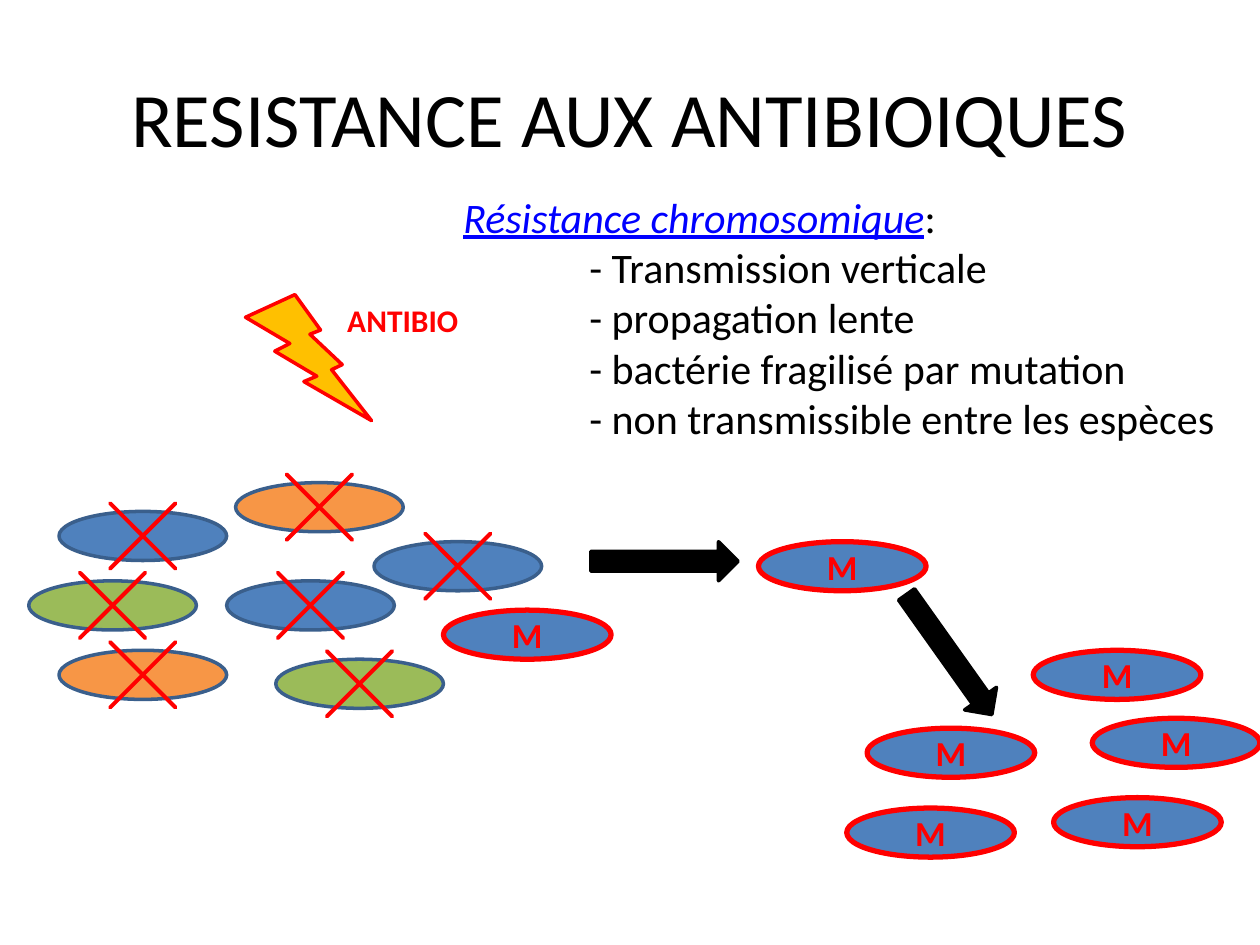
import pptx
import pptx.util
import pptx.dml.color
import pptx.enum.shapes
import pptx.enum.text

Cm = pptx.util.Cm
Pt = pptx.util.Pt
Kind = pptx.enum.shapes.MSO_SHAPE
Align = pptx.enum.text.PP_ALIGN
Anchor = pptx.enum.text.MSO_ANCHOR

RED, BLUE, GREEN, ORANGE = "FF0000", "4F81BD", "9BBB59", "F79646"
BLACK, EDGE, GOLD, LINK = "000000", "3A5F8C", "FFC000", "0000FF"
CELL = (3.38, 0.99)
ARROW = (2.97, 0.79)
CROSS = 2.54


def color(code):
    """Turn a hex string into a colour."""
    return pptx.dml.color.RGBColor.from_string(code)


def write(para, text, size=24, tint=BLACK, align=Align.LEFT, indent=0, **style):
    """Add a run of text to a paragraph with the given format."""
    para.alignment = align
    if indent:
        props = para._p.get_or_add_pPr()
        props.set("marL", str(Cm(indent)))
        props.set("indent", "0")
    run = para.add_run()
    run.text = text
    font = run.font
    font.name, font.size = "Calibri", Pt(size)
    font.color.rgb = color(tint)
    for name, value in style.items():
        setattr(font, name, value)


def draw(slide, kind, left, top, size, fill, edge, width=2):
    """Add a preset shape with a plain fill and outline."""
    shape = slide.shapes.add_shape(kind, Cm(left), Cm(top), Cm(size[0]), Cm(size[1]))
    shape.shadow.inherit = False
    shape.fill.solid()
    shape.fill.fore_color.rgb = color(fill)
    shape.line.color.rgb = color(edge)
    shape.line.width = Pt(width)
    return shape


def frame(slide, left, top, width, height, wrap):
    """Add a text box and return its text frame."""
    box = slide.shapes.add_textbox(Cm(left), Cm(top), Cm(width), Cm(height))
    box.text_frame.word_wrap = wrap
    return box.text_frame


def dead(slide, left, top, fill):
    """Add a bacterium crossed out at its centre."""
    draw(slide, Kind.OVAL, left, top, CELL, fill, EDGE)
    cross = draw(slide, Kind.MATH_MULTIPLY, left + (CELL[0] - CROSS) / 2,
                 top + (CELL[1] - CROSS) / 2, (CROSS, CROSS), RED, RED)
    cross.adjustments[0] = 0.004


def mutant(slide, left, top):
    """Add a resistant bacterium marked M."""
    cell = draw(slide, Kind.OVAL, left, top, CELL, BLUE, RED, 3)
    cell.text_frame.vertical_anchor = Anchor.MIDDLE
    write(cell.text_frame.paragraphs[0], "M", size=20, tint=RED,
          align=Align.CENTER, bold=True)


def heading(slide, left, top, width, height):
    """Place and format the title."""
    title = slide.shapes.title
    title.left, title.top = Cm(left), Cm(top)
    title.width, title.height = Cm(width), Cm(height)
    title.text_frame.vertical_anchor = Anchor.MIDDLE
    write(title.text_frame.paragraphs[0], "RESISTANCE AUX ANTIBIOIQUES",
          size=44, align=Align.CENTER)


def drug(slide, left, top):
    """Draw the antibiotic bolt with its label."""
    draw(slide, Kind.LIGHTNING_BOLT, left, top, (2.54, 2.54), GOLD, RED)
    text = frame(slide, left + 1.8, top, 2.77, 1.02, False)
    write(text.paragraphs[0], "ANTIBIO", size=18, tint=RED, bold=True)


def colony(slide, left, top):
    """Draw the treated colony and its one survivor."""
    cells = [(0.61, 0.58, BLUE), (0, 1.98, GREEN), (0.61, 3.38, ORANGE),
             (3.99, 1.98, BLUE), (4.98, 3.56, GREEN), (6.96, 1.19, BLUE),
             (4.17, 0, ORANGE)]
    for x, y, fill in cells:
        dead(slide, left + x, top + y, fill)
    mutant(slide, left + 8.36, top + 2.57)


def spread(slide, left, top):
    """Draw the survivor, its offspring and the arrows between."""
    for x, y, turn in [(0, 0, 0), (5.74, 1.88, 54.6)]:
        arrow = draw(slide, Kind.RIGHT_ARROW, left + x, top + y, ARROW, BLACK, BLACK)
        arrow.rotation = turn
    for x, y in [(3.38, 0), (5.57, 3.76), (5.16, 5.37), (9.33, 5.16),
                 (10.11, 3.56), (8.92, 2.19)]:
        mutant(slide, left + x, top + y)


def notes(slide, left, top, width, height):
    """Write the traits of chromosomal resistance."""
    text = frame(slide, left, top, width, height, True)
    first = text.paragraphs[0]
    write(first, "Résistance chromosomique", tint=LINK, italic=True, underline=True)
    write(first, ":")
    for trait in ["Transmission verticale", "propagation lente",
                  "bactérie fragilisé par mutation",
                  "non transmissible entre les espèces"]:
        write(text.add_paragraph(), "- " + trait, indent=2.54)


def main():
    """Build and save the slide."""
    deck = pptx.Presentation()
    deck.slide_width, deck.slide_height = Cm(25.4), Cm(19.05)
    slide = deck.slides.add_slide(deck.slide_layouts[5])
    heading(slide, 1.27, 0.76, 22.86, 3.18)
    drug(slide, 4.95, 5.94)
    colony(slide, 0.58, 9.73)
    spread(slide, 11.91, 10.92)
    notes(slide, 9.09, 3.73, 16, 5.38)
    deck.save("out.pptx")


if __name__ == "__main__":
    main()
